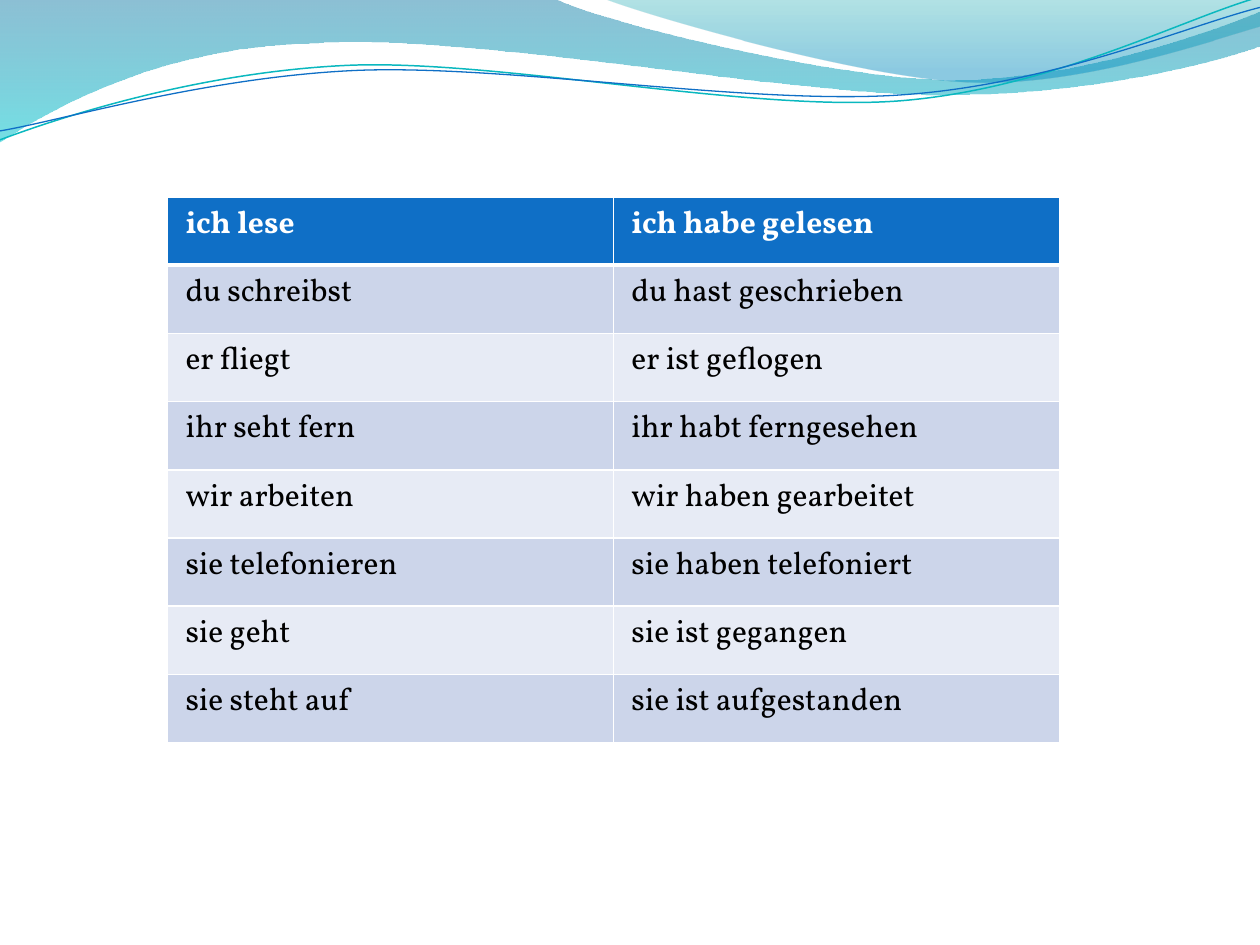
import pptx
import pptx.dml.color
import pptx.oxml
import pptx.oxml.ns
import pptx.util

Cm = pptx.util.Cm
Pt = pptx.util.Pt
qn = pptx.oxml.ns.qn
DRAWING = pptx.oxml.ns.nsdecls("a")

# Content: present tense and perfect tense
VERBS = [
    ("ich lese", "ich habe gelesen"),
    ("du schreibst", "du hast geschrieben"),
    ("er fliegt", "er ist geflogen"),
    ("ihr seht fern", "ihr habt ferngesehen"),
    ("wir arbeiten", "wir haben gearbeitet"),
    ("sie telefonieren", "sie haben telefoniert"),
    ("sie geht", "sie ist gegangen"),
    ("sie steht auf", "sie ist aufgestanden"),
]

# Wave outlines in centimetres: a pair is a straight step, six numbers a Bezier step
# Gradient stops are (position, colour, opacity in percent)
WAVES = [
    {"start": (0, 0),
     "steps": [(11.18, -0.03),
               (12.09, 0.43, 16.87, 1.6, 19.25, 1.6),
               (21.67, 1.6, 24.33, 0.66, 25.4, 0.23),
               (25.43, 0.91),
               (24.97, 1.12, 22.1, 1.93, 18.95, 1.91),
               (15.8, 1.91, 9.7, 0.71, 6.53, 0.86),
               (3.28, 0.91, 1.17, 2.11, -0.03, 2.87)],
     "gradient": [(0, "0074A1", 45), (1, "00C6CF", 55)]},
    {"start": (12.17, -0.03),
     "steps": [(12.93, 0.28, 17.32, 1.57, 19.53, 1.65),
               (21.74, 1.75, 24.41, 0.81, 25.4, 0.53),
               (25.4, 0)],
     "gradient": [(0, "00A1A9", 30), (0.8, "008BBF", 45)]},
    {"start": (-0.05, 2.22),
     "steps": [(1.19, 1.82, 4.02, 1.04, 7.05, 1.05),
               (10.05, 1.07, 15.02, 2.37, 18.08, 2.29),
               (21.13, 2.2, 23.87, 0.91, 25.41, 0.55)],
     "line": ("0AB8BF", 0.85)},
    {"start": (-0.04, 2.04),
     "steps": [(1.16, 1.9, 4.18, 1.15, 7.2, 1.16),
               (10.25, 1.18, 15.13, 2.25, 18.18, 2.17),
               (21.21, 2.1, 23.93, 1.06, 25.45, 0.75)],
     "line": ("0F6FC6", 0.75)},
]
LINE_ROTATION = -2.7

THEME = {
    "header": "0F6FC6",
    "bands": ("CCD5EA", "E7EBF5"),
    "border": "FFFFFF",
    "header_font": {"name": "Vollkorn", "size": Pt(18), "bold": True},
    "body_font": {"name": "Vollkorn", "size": Pt(18), "bold": False},
    "header_text": "FFFFFF",
    "body_text": "000000",
}
TABLE = {"left": 3.38, "top": 3.97, "column": 8.99, "row": 1.375}
TEXT_INSET = 0.36


def rgb(value):
    return pptx.dml.color.RGBColor.from_string(value)


def curve_outline(shape, steps):
    """Join the three straight pieces of each Bezier step into one curve."""
    pieces = iter(shape.element.spPr.findall(".//" + qn("a:lnTo")))
    for step in steps:
        group = [next(pieces) for _ in range(len(step) // 2)]
        if len(group) == 3:
            curve = pptx.oxml.parse_xml(f"<a:cubicBezTo {DRAWING}/>")
            group[0].addprevious(curve)
            for piece in group:
                curve.append(piece[0])
                piece.getparent().remove(piece)


def add_wave(slide, wave):
    points = [(Cm(x), Cm(y)) for step in wave["steps"]
              for x, y in zip(step[::2], step[1::2])]
    builder = slide.shapes.build_freeform(*(Cm(value) for value in wave["start"]))
    builder.add_line_segments(points, close="gradient" in wave)
    shape = builder.convert_to_shape()
    curve_outline(shape, wave["steps"])
    shape.shadow.inherit = False
    if "line" in wave:
        colour, width = wave["line"]
        shape.rotation = LINE_ROTATION
        shape.fill.background()
        shape.line.color.rgb = rgb(colour)
        shape.line.width = Pt(width)
        return
    shape.line.fill.background()
    shape.fill.gradient()
    shape.fill.gradient_angle = 270
    for stop, (position, colour, _) in zip(shape.fill.gradient_stops, wave["gradient"]):
        stop.position = position
        stop.color.rgb = rgb(colour)
    colours = shape.element.spPr.findall(".//" + qn("a:gs") + "/" + qn("a:srgbClr"))
    for element, (_, _, opacity) in zip(colours, wave["gradient"]):
        element.append(pptx.oxml.parse_xml(
            f'<a:alpha {DRAWING} val="{opacity * 1000}"/>'))


def set_borders(cell, widths):
    properties = cell._tc.get_or_add_tcPr()
    for index, (side, width) in enumerate(widths.items()):
        border = pptx.oxml.parse_xml(
            f'<a:ln{side} {DRAWING} w="{Pt(width)}"><a:solidFill>'
            f'<a:srgbClr val="{THEME["border"]}"/></a:solidFill></a:ln{side}>')
        properties.insert(index, border)


def add_verb_table(slide):
    row_count, column_count = len(VERBS), len(VERBS[0])
    table = slide.shapes.add_table(
        row_count, column_count, Cm(TABLE["left"]), Cm(TABLE["top"]),
        Cm(TABLE["column"] * column_count), Cm(TABLE["row"] * row_count)).table
    for column in table.columns:
        column.width = Cm(TABLE["column"])
    for row_index, forms in enumerate(VERBS):
        table.rows[row_index].height = Cm(TABLE["row"])
        kind = "header" if row_index == 0 else "body"
        fill = THEME["header"] if row_index == 0 else THEME["bands"][(row_index - 1) % 2]
        for column_index, form in enumerate(forms):
            cell = table.cell(row_index, column_index)
            cell.margin_left = Cm(TEXT_INSET)
            cell.fill.solid()
            cell.fill.fore_color.rgb = rgb(fill)
            set_borders(cell, {"L": 1, "R": 1, "T": 3 if row_index == 1 else 1,
                               "B": 3 if row_index == 0 else 1})
            cell.text = form
            font = cell.text_frame.paragraphs[0].runs[0].font
            for name, value in THEME[kind + "_font"].items():
                setattr(font, name, value)
            font.color.rgb = rgb(THEME[kind + "_text"])


def main():
    presentation = pptx.Presentation()
    presentation.slide_width = Cm(25.4)
    presentation.slide_height = Cm(19.05)
    slide = presentation.slides.add_slide(presentation.slide_layouts[6])
    # Wave decoration along the top edge
    for wave in WAVES:
        add_wave(slide, wave)
    # Verb table
    add_verb_table(slide)
    presentation.save("out.pptx")


if __name__ == "__main__":
    main()
